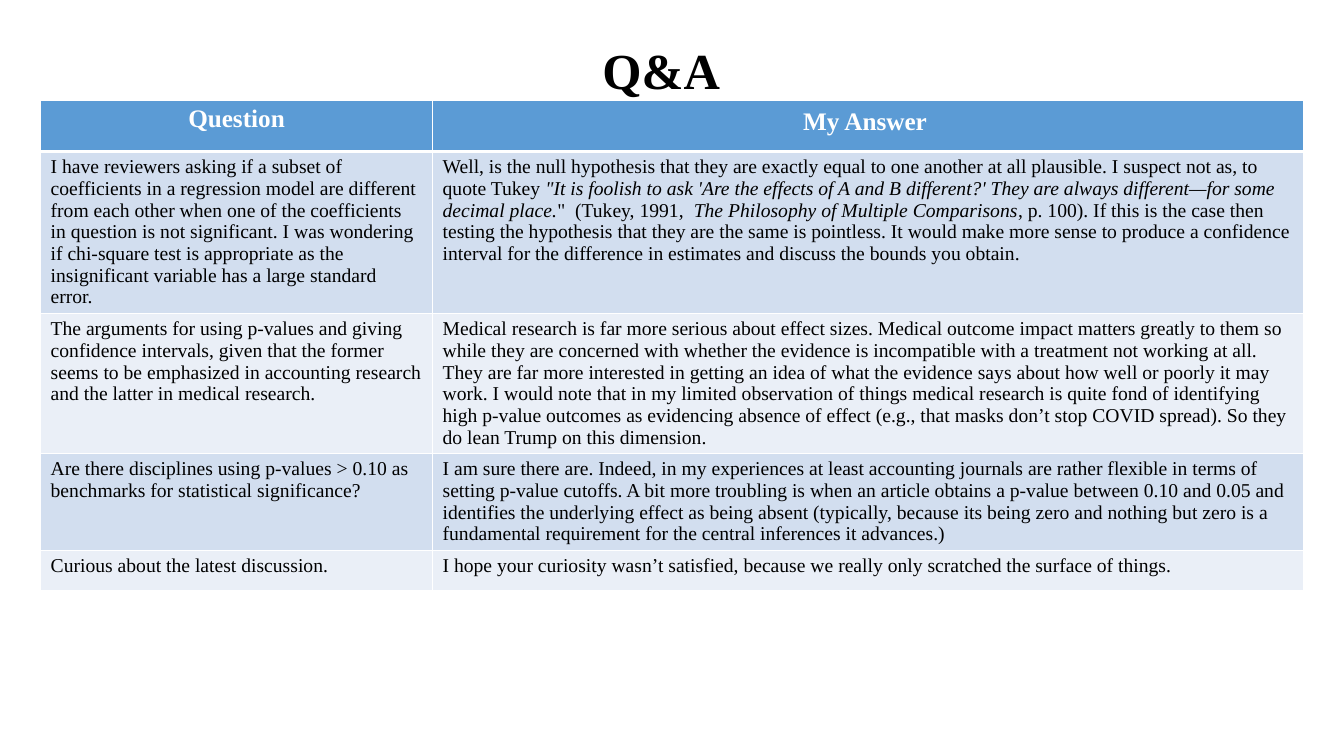
from lxml.etree import SubElement
from pptx import Presentation
from pptx.dml.color import RGBColor as RGB
from pptx.enum.text import MSO_ANCHOR as ANCHOR, PP_ALIGN as ALIGN
from pptx.oxml.ns import qn
from pptx.util import Pt

COLORS = {"text": "000000", "white": "FFFFFF", "header": "5B9BD5",
          "band_dark": "D2DEEF", "band_light": "EAEFF7"}

HEADERS = ["Question", "My Answer "]
# Each cell is a list of runs; every second run is italic
QA = [
    (["I have reviewers asking if a subset of coefficients in a regression model are "
      "different from each other when one of the coefficients in question is not "
      "significant. I was wondering if chi-square test is appropriate as the "
      "insignificant variable has a large standard error."],
     ["Well, is the null hypothesis that they are exactly equal to one another at all "
      "plausible. I suspect not as, to quote Tukey ",
      "\"It is foolish to ask 'Are the effects of A and B different?' They are always "
      "different—for some decimal place.",
      "\"  (Tukey, 1991,  ",
      "The Philosophy of Multiple Comparisons",
      ", p. 100). If this is the case then testing the hypothesis that they are the same "
      "is pointless. It would make more sense to produce a confidence interval for the "
      "difference in estimates and discuss the bounds you obtain."]),
    (["The arguments for using p-values and giving confidence intervals, given that the "
      "former seems to be emphasized in accounting research and the latter in medical "
      "research."],
     ["Medical research is far more serious about effect sizes. Medical outcome impact "
      "matters greatly to them so while they are concerned with whether the evidence is "
      "incompatible with a treatment not working at all. They are far more interested in "
      "getting an idea of what the evidence says about how well or poorly it may work. I "
      "would note that in my limited observation of things medical research is quite fond "
      "of identifying high p-value outcomes as evidencing absence of effect (e.g., that "
      "masks don’t stop COVID spread). So they do lean Trump on this dimension."]),
    (["Are there disciplines using p-values > 0.10 as benchmarks for statistical "
      "significance?"],
     ["I am sure there are. Indeed, in my experiences at least accounting journals are "
      "rather flexible in terms of setting p-value cutoffs. A bit more troubling is when "
      "an article obtains a p-value between 0.10 and 0.05 and identifies the underlying "
      "effect as being absent (typically, because its being zero and nothing but zero is "
      "a fundamental requirement for the central inferences it advances.)"]),
    (["Curious about the latest discussion."],
     ["I hope your curiosity wasn’t satisfied, because we really only scratched the "
      "surface of things."]),
]


class Deck:
    """Holds the style and the current slide."""
    font = "Times New Roman"

    def __init__(self, width, height):
        self.prs = Presentation()
        self.prs.slide_width, self.prs.slide_height = Pt(width), Pt(height)
        self.s = self.prs.slides.add_slide(self.prs.slide_layouts[5])

    def style(self, p, size, color, bold=False, align=ALIGN.LEFT):
        p.alignment = align
        f = p.font
        f.name, f.size, f.bold = self.font, Pt(size), bold
        f.color.rgb = RGB.from_string(COLORS[color])

    def title(self, text, x, y, w, h):
        sp = self.s.shapes.title
        sp.left, sp.top, sp.width, sp.height = Pt(x), Pt(y), Pt(w), Pt(h)
        tf = sp.text_frame
        tf.text, tf.vertical_anchor = text, ANCHOR.MIDDLE
        p = tf.paragraphs[0]
        p.line_spacing = 0.9
        self.style(p, 36, "text", True, ALIGN.CENTER)

    def table(self, x, y, cols, rows):
        sp = self.s.shapes.add_table(len(rows), len(cols), Pt(x), Pt(y),
                                     Pt(sum(cols)), Pt(sum(rows)))
        for col, w in zip(sp.table.columns, cols):
            col.width = Pt(w)
        for row, h in zip(sp.table.rows, rows):
            row.height = Pt(h)
        return sp.table

    def cell(self, cell, runs, fill, bottom=1, top=1, **style):
        p = cell.text_frame.paragraphs[0]
        for i, text in enumerate(runs):
            r = p.add_run()
            r.text = text
            if i % 2:
                r.font.italic = True
        self.style(p, **style)
        self.borders(cell, L=1, R=1, T=top, B=bottom)
        cell.fill.solid()
        cell.fill.fore_color.rgb = RGB.from_string(COLORS[fill])

    def borders(self, cell, **widths):
        tc_pr = cell._tc.get_or_add_tcPr()
        for side, w in widths.items():
            ln = SubElement(tc_pr, qn(f"a:ln{side}"), w=str(Pt(w)))
            fill = SubElement(ln, qn("a:solidFill"))
            SubElement(fill, qn("a:srgbClr"), val=COLORS["white"])


def main():
    deck = Deck(960, 540)

    # Title
    deck.title("Q&A", 36.7, 0, 871.2, 104.4)

    # Question and answer table
    table = deck.table(29, 71.5, [280, 622], [36.7] + [29.2] * len(QA))
    for c, text in enumerate(HEADERS):
        deck.cell(table.cell(0, c), [text], "header", bottom=3,
                  size=18, color="white", bold=True, align=ALIGN.CENTER)
    table.cell(0, 1).margin_top = Pt(5.4)
    for r, pair in enumerate(QA, 1):
        band = "band_dark" if r % 2 else "band_light"
        for c, runs in enumerate(pair):
            deck.cell(table.cell(r, c), runs, band, top=3 if r == 1 else 1,
                      size=14, color="text")

    deck.prs.save("out.pptx")


if __name__ == "__main__":
    main()
